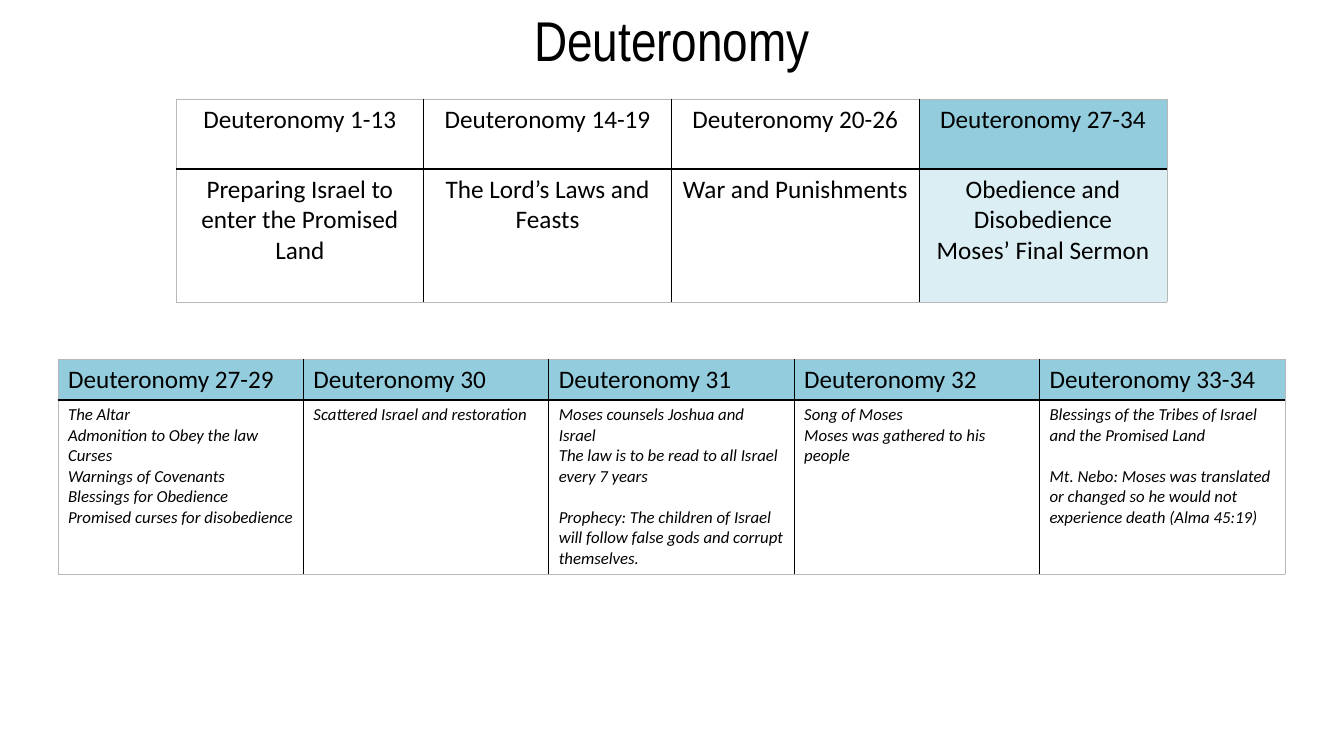
from lxml import etree
from pptx import Presentation
from pptx.dml.color import RGBColor
from pptx.enum.text import MSO_ANCHOR, MSO_AUTO_SIZE, PP_ALIGN
from pptx.oxml.ns import qn
from pptx.util import Pt

CENTER, LEFT = PP_ALIGN.CENTER, PP_ALIGN.LEFT
TOP = MSO_ANCHOR.TOP
GROW = MSO_AUTO_SIZE.SHAPE_TO_FIT_TEXT
TITLE_ONLY = 5
EMU_PER_PX = 914400 / 100.8
COLORS = {"ink": "000000", "paper": "FFFFFF", "teal": "93CDDD",
          "pale": "DBEEF4", "edge": "B8B8B8"}


def px(length):
    """Turn a length in px into EMU."""
    return round(length * EMU_PER_PX)


def write(frame, text, size, font="Calibri", align=LEFT, italic=False):
    """Write one paragraph per line; a leading ¶ asks for a gap above it."""
    for index, line in enumerate(text.split("\n")):
        paragraph = frame.paragraphs[0] if index == 0 else frame.add_paragraph()
        paragraph.alignment = align
        paragraph.space_before = Pt(size * 1.22 if line.startswith("¶") else 0)
        run = paragraph.add_run()
        run.text = line.removeprefix("¶")
        run.font.size, run.font.name = Pt(size), font
        run.font.italic, run.font.bold = italic, False
        run.font.color.rgb = RGBColor.from_string(COLORS["ink"])


class Outline:
    """Holds the presentation, its current slide and the style of its parts."""

    def __init__(self):
        """Open a blank slide of the right size."""
        self.deck = Presentation()
        self.deck.slide_width, self.deck.slide_height = px(1344), px(756)
        self.slide = self.deck.slides.add_slide(self.deck.slide_layouts[TITLE_ONLY])

    def title(self, text, left, top, width, height):
        """Move and fill the title placeholder."""
        heading = self.slide.shapes.title
        heading.left, heading.top = px(left), px(top)
        heading.width, heading.height = px(width), px(height)
        heading.text_frame.auto_size = GROW
        write(heading.text_frame, text, 40, font="Arial Narrow", align=CENTER)

    def border(self, cell, side, outer):
        """Draw one side of a cell, lighter on the rim of the table."""
        line = etree.SubElement(cell._tc.get_or_add_tcPr(), qn(f"a:ln{side}"),
                                w=str(Pt(0.5 if outer else 1)))
        fill = etree.SubElement(line, qn("a:solidFill"))
        etree.SubElement(fill, qn("a:srgbClr"), val=COLORS["edge" if outer else "ink"])

    def table(self, rows, fills, left, top, width, heights, formats):
        """Add a table with equal columns and one text format per row."""
        count = len(rows[0])
        grid = self.slide.shapes.add_table(len(rows), count, px(left), px(top),
                                           px(width), px(sum(heights))).table
        grid.first_row = grid.horz_banding = False
        for column in grid.columns:
            column.width = px(width / count)
        for r, texts in enumerate(rows):
            grid.rows[r].height = px(heights[r])
            for c, text in enumerate(texts):
                cell = grid.cell(r, c)
                rims = {"L": c == 0, "R": c == count - 1,
                        "T": r == 0, "B": r == len(rows) - 1}
                for side, outer in rims.items():
                    self.border(cell, side, outer)
                cell.fill.solid()
                cell.fill.fore_color.rgb = RGBColor.from_string(COLORS[fills[r][c]])
                cell.vertical_anchor = TOP
                write(cell.text_frame, text, **formats[r])


def main():
    """Build the slide and save it."""
    outline = Outline()
    sections = [
        ["Deuteronomy 1-13", "Deuteronomy 14-19", "Deuteronomy 20-26", "Deuteronomy 27-34"],
        ["Preparing Israel to enter the Promised Land", "The Lord’s Laws and Feasts",
         "War and Punishments", "Obedience and Disobedience\nMoses’ Final Sermon"],
    ]
    section_fills = [["paper"] * 3 + [accent] for accent in ("teal", "pale")]
    outline.table(sections, section_fills, 176, 99, 991, [70, 133],
                  [{"size": 18, "align": CENTER}] * 2)

    chapters = [
        ["Deuteronomy 27-29", "Deuteronomy 30", "Deuteronomy 31", "Deuteronomy 32",
         "Deuteronomy 33-34"],
        ["The Altar\nAdmonition to Obey the law\nCurses\nWarnings of Covenants\n"
         "Blessings for Obedience\nPromised curses for disobedience",
         "Scattered Israel and restoration",
         "Moses counsels Joshua and Israel\n"
         "The law is to be read to all Israel every 7 years\n"
         "¶Prophecy: The children of Israel will follow false gods and corrupt themselves.",
         "Song of Moses\nMoses was gathered to his people",
         "Blessings of the Tribes of Israel and the Promised Land\n"
         "¶Mt. Nebo: Moses was translated or changed so he would not experience death "
         "(Alma 45:19)"],
    ]
    outline.table(chapters, [["teal"] * 5, ["paper"] * 5], 58, 359, 1227, [41, 174],
                  [{"size": 18}, {"size": 12, "italic": True}])

    outline.title("Deuteronomy", 0, 0, 1344, 78)
    outline.deck.save("out.pptx")


if __name__ == "__main__":
    main()
